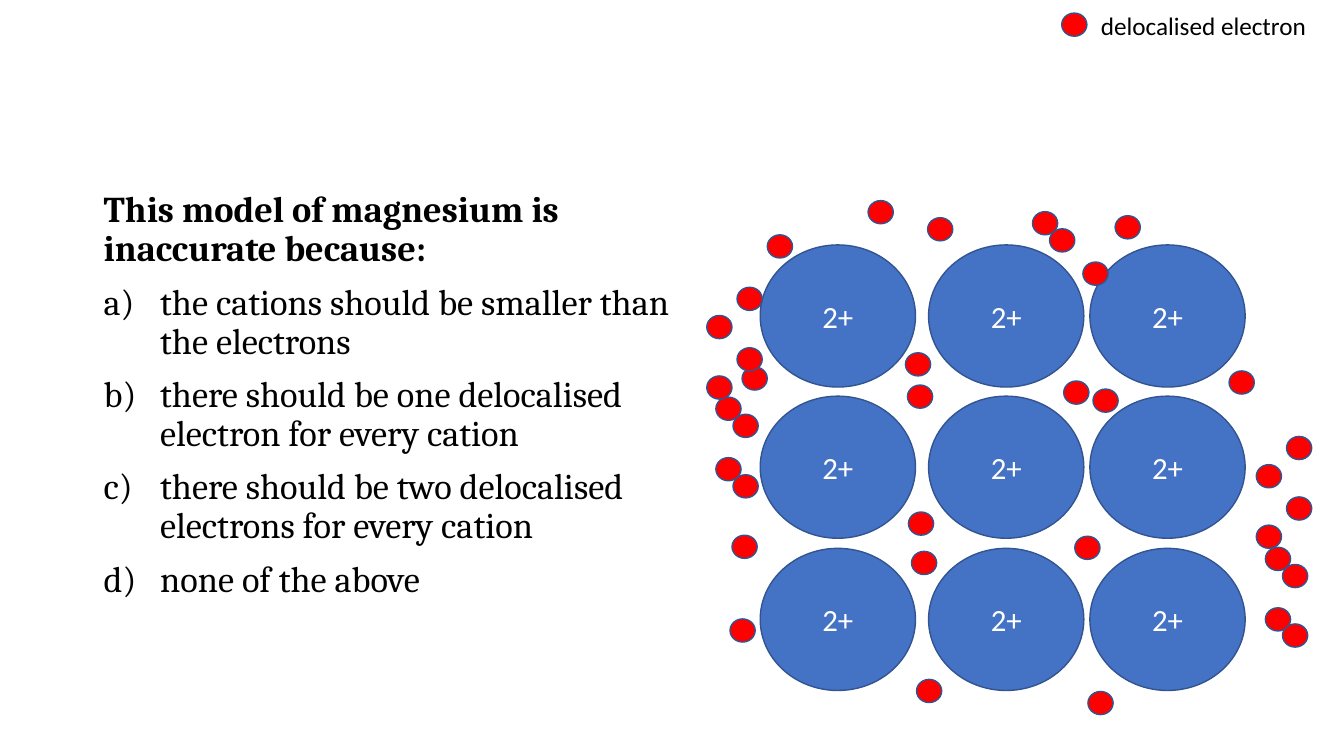
from pptx import Presentation
from pptx import util as u
from pptx.dml.color import RGBColor
from pptx.enum import shapes, text
from pptx.oxml.ns import qn
from lxml import etree

PX = 9144  # 100 px to the inch
COLORS = {"cation": "4472C4", "electron": "FF0000", "outline": "325491",
          "white": "FFFFFF", "black": "000000"}

deck = Presentation()
deck.slide_width, deck.slide_height = 1333 * PX, 750 * PX
page = deck.slides.add_slide(deck.slide_layouts[6])


def write(para, words, size, font="Calibri", color="black", bold=False):
    span = para.add_run()
    span.text = words
    span.font.size = u.Pt(size)
    span.font.name = font
    span.font.bold = bold
    span.font.color.rgb = RGBColor.from_string(COLORS[color])


def add_ball(left, top, width, height, color):
    ball = page.shapes.add_shape(shapes.MSO_SHAPE.OVAL, left * PX, top * PX,
                                 width * PX, height * PX)
    ball.shadow.inherit = False
    ball.fill.solid()
    ball.fill.fore_color.rgb = RGBColor.from_string(COLORS[color])
    ball.line.color.rgb = RGBColor.from_string(COLORS["outline"])
    ball.line.width = u.Pt(1)
    return ball


# Lattice of cations
for top in (243, 393, 544):
    for left in (754, 921, 1081):
        cation = add_ball(left, top, 154, 141, "cation")
        cation.text_frame.vertical_anchor = text.MSO_ANCHOR.MIDDLE
        para = cation.text_frame.paragraphs[0]
        para.alignment = text.PP_ALIGN.CENTER
        write(para, "2+", 22, color="white")

# Question and lettered answers
box = page.shapes.add_textbox(93 * PX, 185 * PX, 589 * PX, 476 * PX)
box.text_frame.word_wrap = True
question = box.text_frame.paragraphs[0]
write(question, "This model of magnesium is inaccurate because:", 25.9, "Cambria", bold=True)
for answer in ("the cations should be smaller than the electrons",
               "there should be one delocalised electron for every cation",
               "there should be two delocalised electrons for every cation",
               "none of the above"):
    para = box.text_frame.add_paragraph()
    write(para, answer, 25.9, "Cambria")
    props = para._p.get_or_add_pPr()
    props.set("marL", str(56 * PX))
    props.set("indent", str(-56 * PX))
    etree.SubElement(props, qn("a:buFont"), typeface="+mj-lt")
    etree.SubElement(props, qn("a:buAutoNum"), type="alphaLcParenR")
for para in box.text_frame.paragraphs:
    para.line_spacing = 0.9
    para.space_before = u.Pt(10)

# Delocalised electrons, back to front; the last one is the key
electrons = [
    (1255, 603), (900, 382), (1084, 386), (1106, 214), (1219, 368), (736, 364),
    (724, 614), (909, 674), (904, 547), (1066, 532), (1041, 227), (861, 199),
    (898, 350), (1055, 378), (920, 216), (1074, 260), (726, 531), (761, 233),
    (1255, 543), (901, 508), (1024, 210), (1246, 521), (1246, 461), (1272, 619),
    (1272, 560), (1276, 493), (1276, 433), (1079, 686), (710, 454), (710, 394),
    (701, 373), (701, 313), (727, 471), (727, 411), (731, 345), (731, 285),
    (1053, 13),
]
for left, top in electrons:
    add_ball(left, top, 25, 23, "electron")

# Key label
label = page.shapes.add_textbox(1082 * PX, 5 * PX, 255 * PX, 40 * PX)
label.text_frame.word_wrap = True
write(label.text_frame.paragraphs[0], "delocalised electron", 18)

deck.save("out.pptx")
